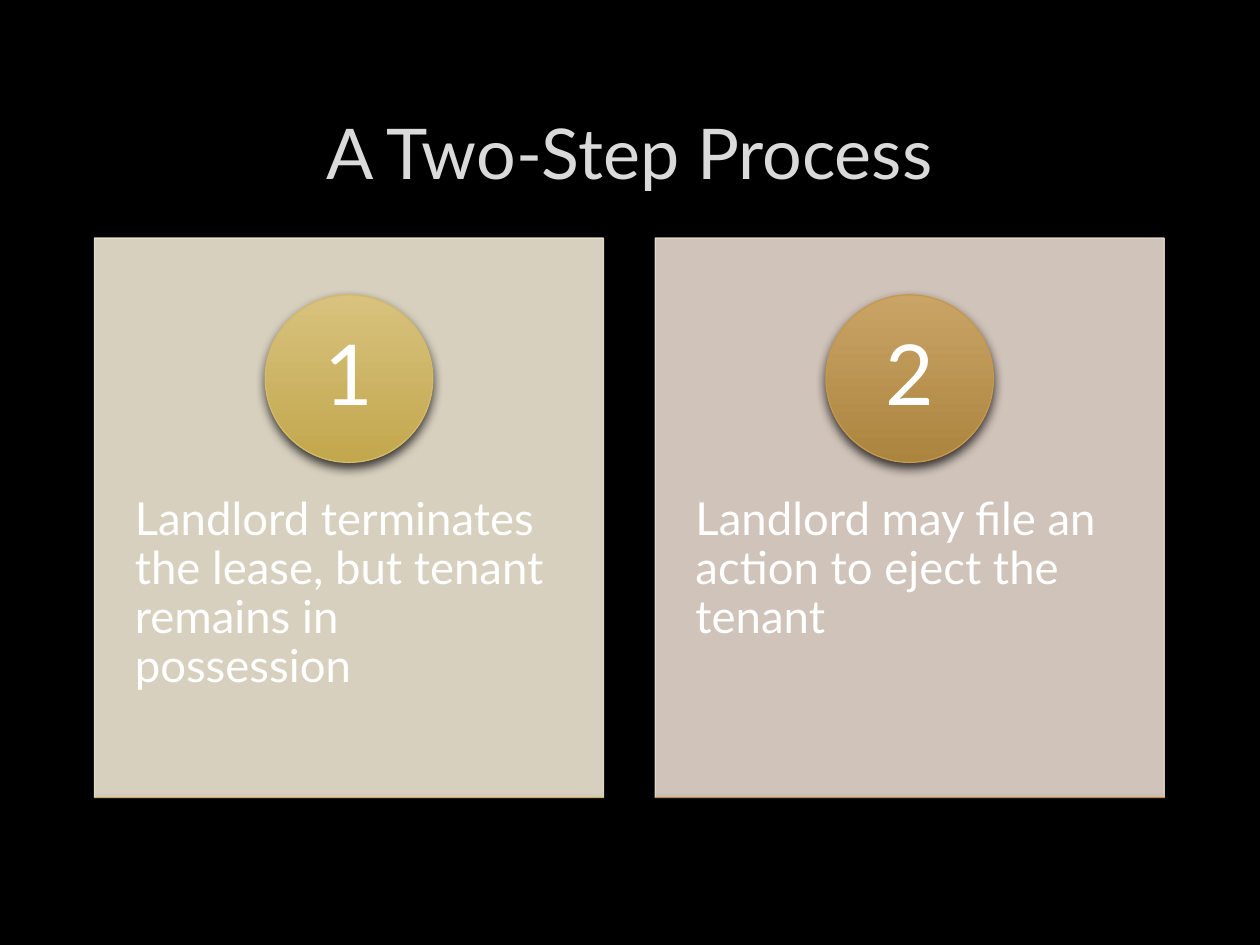
"""Build the two-step process slide."""
import pptx
import pptx.util
import pptx.dml.color
import pptx.enum.shapes
import pptx.enum.text
import pptx.oxml
import pptx.oxml.ns

TITLE = "A Two-Step Process"
STEPS = [
    dict(num="1", text="Landlord terminates the lease, but tenant remains in possession",
         card="EFE7D4", disc=("D8C27E", "C2A74D"), rim="D3BA68",
         base=("D1B371", "BA9642"), edge="CCAA5A"),
    dict(num="2", text="Landlord may file an action to eject the tenant",
         card="E7D9CE", disc=("CAA466", "AB843F"), rim="C5994C",
         base=("C1935D", "A17337"), edge="BB8640"),
]
LEFT, TOP, STEP, WIDE, HIGH = 0.75, 1.89, 4.45, 4.04, 4.44
DISC, LABEL = 1.33, 0.94
FONT = "Lato"
ALIGN = pptx.enum.text.PP_ALIGN
ANCHOR = pptx.enum.text.MSO_ANCHOR
KIND = pptx.enum.shapes.MSO_SHAPE
Inches = pptx.util.Inches


def tint(color, code):
    color.rgb = pptx.dml.color.RGBColor.from_string(code)


def fade(fill, pct):
    for node in fill._xPr.iter(pptx.oxml.ns.qn("a:srgbClr")):
        pptx.oxml.ns.qn("a:alpha")
        node.append(pptx.oxml.parse_xml(
            f'<a:alpha {pptx.oxml.ns.nsdecls("a")} val="{pct * 1000}"/>'))


def box(shapes, kind, place, fill, line, shade):
    item = shapes.add_shape(kind, *map(Inches, place))
    if isinstance(fill, tuple):
        item.fill.gradient()
        item.fill.gradient_angle = 270
        for stop, code in zip(item.fill.gradient_stops, fill):
            tint(stop.color, code)
    else:
        item.fill.solid()
        tint(item.fill.fore_color, fill)
    item.line.width = pptx.util.Pt(0.75)
    tint(item.line.color, line)
    if not isinstance(fill, tuple):
        fade(item.fill, 90)
    item.shadow.inherit = False
    blur, dist, alpha = shade
    glow = item._element.spPr.find(pptx.oxml.ns.qn("a:effectLst"))
    glow.append(pptx.oxml.parse_xml(
        f'<a:outerShdw {pptx.oxml.ns.nsdecls("a")} blurRad="{blur * 12700}" '
        f'dist="{dist * 12700}" dir="5400000" algn="ctr" rotWithShape="0">'
        f'<a:srgbClr val="000000"><a:alpha val="{alpha * 1000}"/></a:srgbClr></a:outerShdw>'))


def write(frame, text, size, code, align, anchor, space=None):
    frame.word_wrap = True
    frame.vertical_anchor = anchor
    para = frame.paragraphs[0]
    para.alignment = align
    if space:
        para.line_spacing = space
    run = para.add_run()
    run.text = text
    run.font.size = pptx.util.Pt(size)
    run.font.name = FONT
    tint(run.font.color, code)


def label(shapes, place, pads, *style):
    frame = shapes.add_textbox(*map(Inches, place)).text_frame
    frame.margin_left = frame.margin_right = Inches(pads[0])
    frame.margin_top = frame.margin_bottom = Inches(pads[1])
    write(frame, *style, 0.9)


def card(shapes, left, step):
    mid = left + WIDE / 2
    hub = TOP + 0.45 + DISC / 2
    deep = (6, 3, 75)
    box(shapes, KIND.RECTANGLE, (left, TOP, WIDE, HIGH), step["card"], step["card"], (5, 2, 60))
    label(shapes, (left, 3.58, WIDE, 2.66), (0.32, 0.36),
          step["text"], 26, "FFFFFF", ALIGN.LEFT, ANCHOR.TOP)
    box(shapes, KIND.OVAL, (mid - DISC / 2, hub - DISC / 2, DISC, DISC),
        step["disc"], step["rim"], deep)
    label(shapes, (mid - LABEL / 2, hub - LABEL / 2, LABEL, LABEL), (0.1, 0.01),
          step["num"], 48, "FFFFFF", ALIGN.CENTER, ANCHOR.MIDDLE)
    box(shapes, KIND.RECTANGLE, (left, TOP + HIGH, WIDE, 0), step["base"], step["edge"], deep)


def main():
    deck = pptx.Presentation()
    deck.slide_width, deck.slide_height = Inches(10), Inches(7.5)
    slide = deck.slides.add_slide(deck.slide_layouts[5])
    back = slide.background.fill
    back.solid()
    tint(back.fore_color, "000000")
    title = slide.shapes.title
    title.left, title.top, title.width, title.height = map(Inches, (0.75, 0.67, 8.49, 1.06))
    write(title.text_frame, TITLE, 40, "DADADA", ALIGN.CENTER, ANCHOR.MIDDLE)
    group = slide.shapes.add_group_shape()
    for i, step in enumerate(STEPS):
        card(group.shapes, LEFT + i * STEP, step)
    deck.save("out.pptx")


if __name__ == "__main__":
    main()
